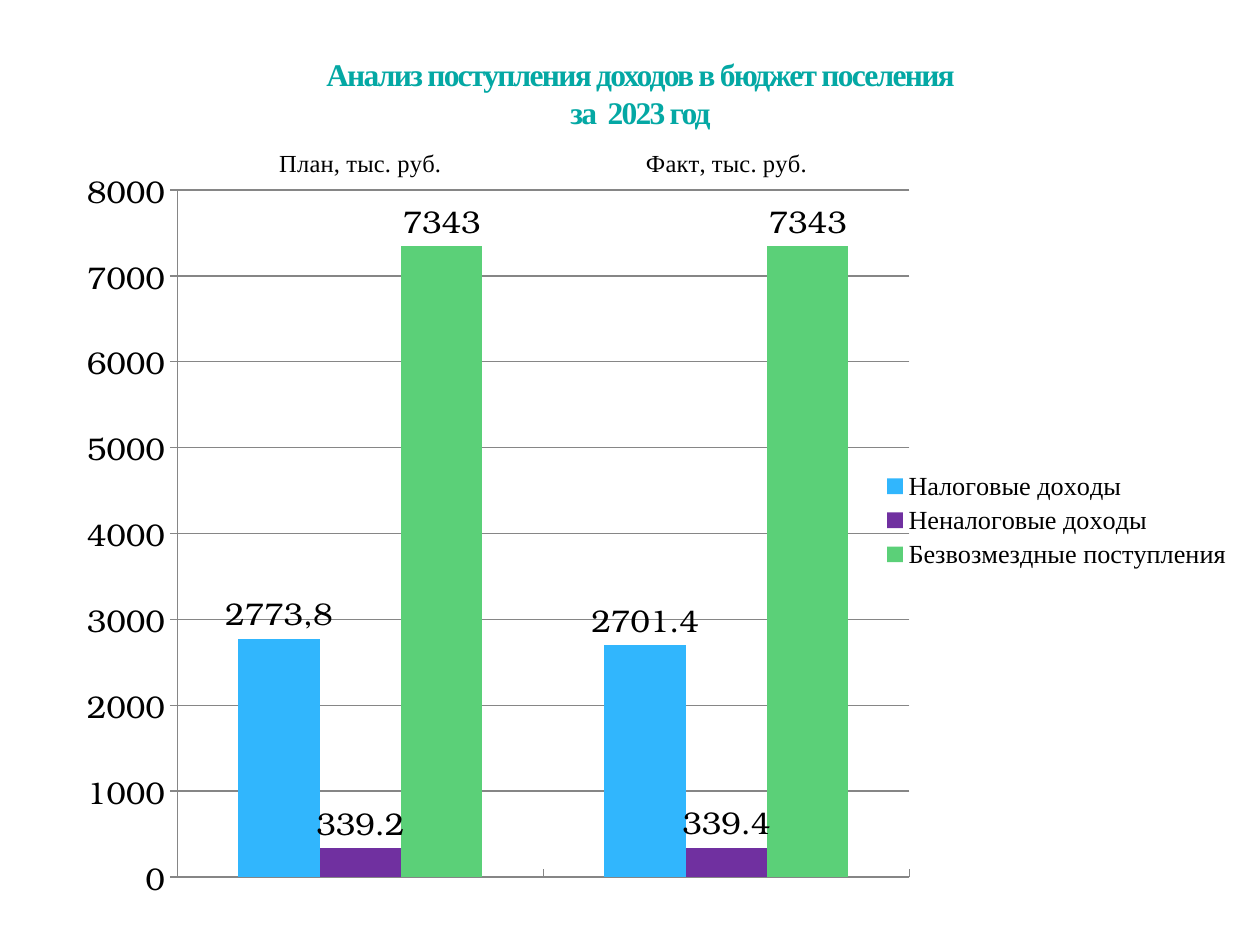
from lxml import etree
from pptx import Presentation
from pptx.chart.data import CategoryChartData
from pptx.dml.color import RGBColor
from pptx.enum.chart import (XL_CHART_TYPE, XL_LABEL_POSITION, XL_LEGEND_POSITION,
                             XL_TICK_LABEL_POSITION, XL_TICK_MARK)
from pptx.enum.text import MSO_ANCHOR, PP_ALIGN
from pptx.oxml.ns import qn
from pptx.util import Pt

PX = 914400 // 126
SERIF = "Times New Roman"
BONUM = "TeX Gyre Bonum"
BLACK = RGBColor(0x00, 0x00, 0x00)
TEAL = RGBColor(0x04, 0xA8, 0xA4)
BLUE = RGBColor(0x31, 0xB6, 0xFD)
PURPLE = RGBColor(0x70, 0x30, 0xA0)
GREEN = RGBColor(0x5B, 0xD0, 0x78)
GREY = RGBColor(0x86, 0x86, 0x86)

COLUMNS = XL_CHART_TYPE.COLUMN_CLUSTERED
OUTSIDE_END = XL_LABEL_POSITION.OUTSIDE_END
LEGEND_RIGHT = XL_LEGEND_POSITION.RIGHT
LABELS_HIGH = XL_TICK_LABEL_POSITION.HIGH
TICK_IN, TICK_OUT, TICK_NONE = XL_TICK_MARK.INSIDE, XL_TICK_MARK.OUTSIDE, XL_TICK_MARK.NONE
TOP, CENTER = MSO_ANCHOR.TOP, PP_ALIGN.CENTER

PERIODS = ["План, тыс. руб.", "Факт, тыс. руб."]
INCOME = [
    ("Налоговые доходы", (2773.8, 2701.4), BLUE),
    ("Неналоговые доходы", (339.2, 339.4), PURPLE),
    ("Безвозмездные поступления", (7343, 7343), GREEN),
]


def style_font(font, size, name, color=BLACK, bold=False):
    """Set size, typeface, colour and weight of a font."""
    font.size, font.name, font.bold = Pt(size), name, bold
    font.color.rgb = color


def write_text(frame, text, size, name, color=BLACK, bold=False, spacing=0):
    """Write centred lines into a text frame as one paragraph."""
    paragraph = frame.paragraphs[0]
    paragraph.text = text.replace("\n", "\v")
    paragraph.alignment = CENTER
    for run in paragraph.runs:
        style_font(run.font, size, name, color, bold)
        if spacing:
            run.font._element.set("spc", str(spacing * 100))


def add_heading(slide, left, top, width, height):
    """Place the heading in the given box."""
    heading = slide.shapes.add_textbox(left * PX, top * PX, width * PX, height * PX)
    frame = heading.text_frame
    frame.word_wrap = True
    frame.vertical_anchor = TOP
    frame.margin_top = frame.margin_bottom = 0
    write_text(frame, "Анализ поступления доходов в бюджет поселения\nза  2023 год",
               18, SERIF, color=TEAL, bold=True, spacing=-1)


def set_plot_layout(chart, x, y, w, h):
    """Fix the inner plot area as fractions of the chart."""
    plot_area = chart._chartSpace.chart.plotArea
    for old in plot_area.findall(qn("c:layout")):
        plot_area.remove(old)
    layout = etree.Element(qn("c:layout"))
    manual = etree.SubElement(layout, qn("c:manualLayout"))
    settings = {"layoutTarget": "inner", "xMode": "edge", "yMode": "edge",
                "x": x, "y": y, "w": w, "h": h}
    for tag, value in settings.items():
        etree.SubElement(manual, qn(f"c:{tag}")).set("val", str(value))
    plot_area.insert(0, layout)


def style_axes(chart):
    """Format the period axis and the amount axis."""
    periods, amounts = chart.category_axis, chart.value_axis
    periods.major_tick_mark, amounts.major_tick_mark = TICK_IN, TICK_OUT
    periods.tick_label_position = LABELS_HIGH
    style_font(periods.tick_labels.font, 14, SERIF)
    style_font(amounts.tick_labels.font, 18, BONUM)
    amounts.minimum_scale, amounts.maximum_scale, amounts.major_unit = 0, 8000, 1000
    amounts.has_major_gridlines = True
    for axis_part in (periods, amounts, amounts.major_gridlines):
        axis_part.format.line.color.rgb = GREY
        axis_part.format.line.width = Pt(0.75)
    for axis in (periods, amounts):
        axis.minor_tick_mark = TICK_NONE


def add_income_chart(slide, left, top, width, height):
    """Place the clustered columns of planned and actual income."""
    data = CategoryChartData()
    data.categories = PERIODS
    for name, amounts, _ in INCOME:
        data.add_series(name, amounts)
    chart = slide.shapes.add_chart(COLUMNS, left * PX, top * PX, width * PX,
                                   height * PX, data).chart
    style_font(chart.font, 18, BONUM)
    chart.has_title = False
    chart.has_legend = True
    chart.legend.position = LEGEND_RIGHT
    chart.legend.include_in_layout = False
    style_font(chart.legend.font, 15, SERIF)
    plot = chart.plots[0]
    plot.gap_width, plot.overlap, plot.vary_by_categories = 150, 0, False
    for series, (_, _, color) in zip(plot.series, INCOME):
        series.format.fill.solid()
        series.format.fill.fore_color.rgb = color
        series.data_labels.show_value = True
        series.data_labels.position = OUTSIDE_END
        style_font(series.data_labels.font, 18, BONUM)
    planned_tax = plot.series[0].points[0].data_label
    write_text(planned_tax.text_frame, "2773,8", 18, BONUM)
    planned_tax.position = OUTSIDE_END
    style_axes(chart)
    set_plot_layout(chart, 0.096, 0.06, 0.62, 0.915)


def main():
    """Build the slide and save it."""
    deck = Presentation()
    deck.slide_width, deck.slide_height = 1260 * PX, 945 * PX
    slide = deck.slides.add_slide(deck.slide_layouts[6])
    add_income_chart(slide, 64, 145, 1181, 753)
    add_heading(slide, 144, 55, 993, 110)
    deck.save("out.pptx")


if __name__ == "__main__":
    main()
